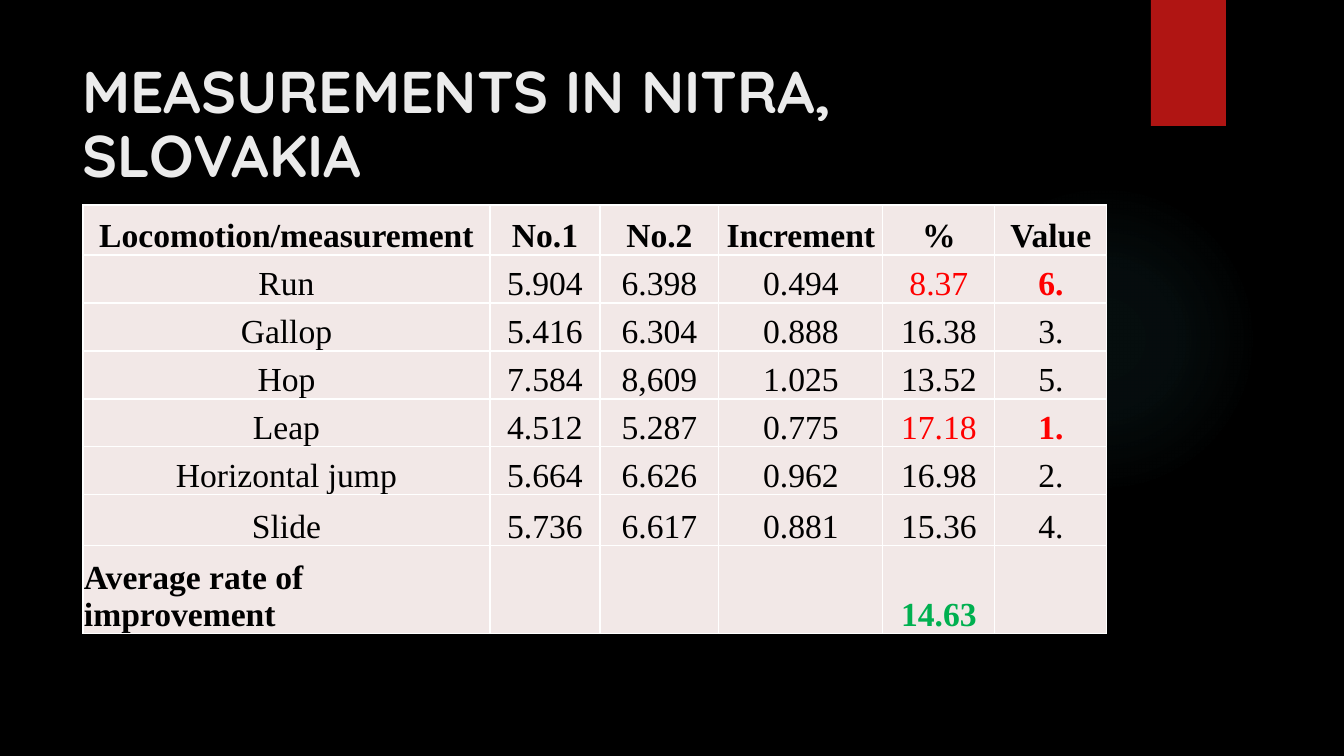
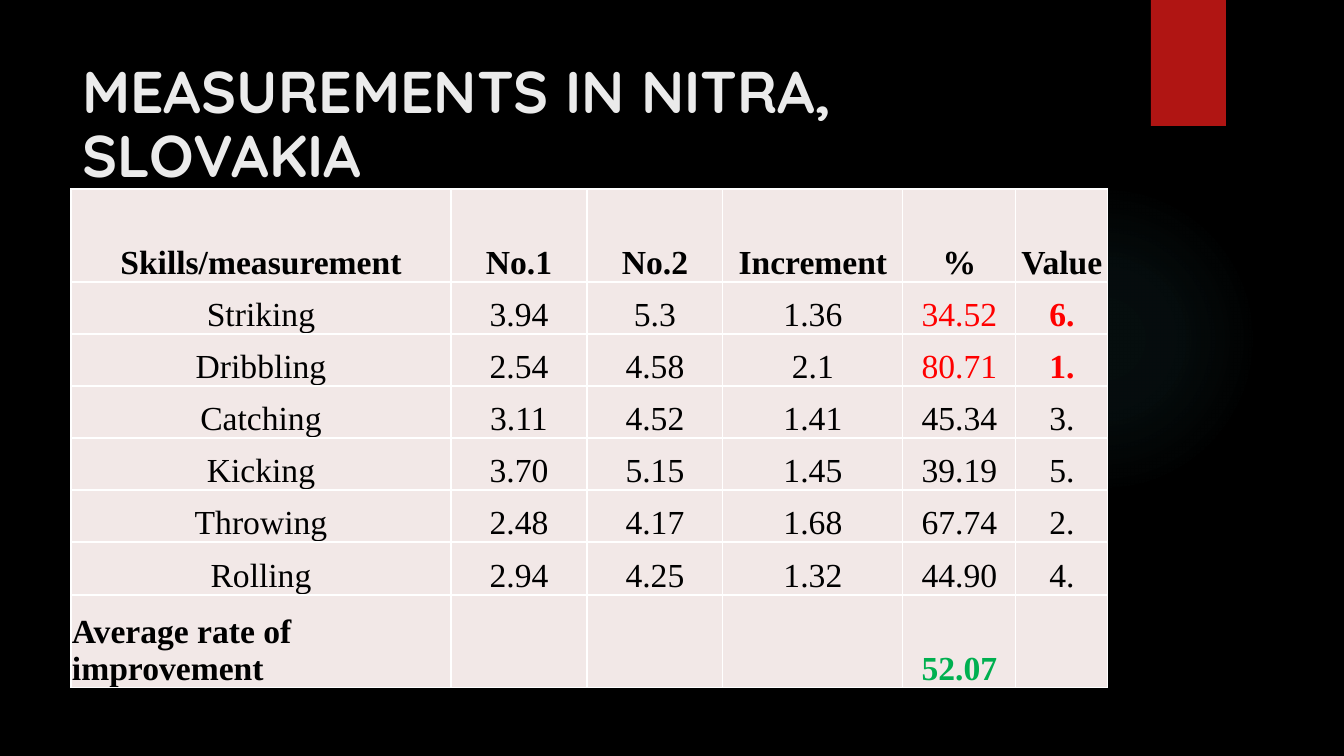
"""Two slides of movement measurements, each a titled table."""
from lxml.etree import SubElement as Sub
from pptx import Presentation
from pptx.dml.color import RGBColor as Rgb
from pptx.enum.shapes import MSO_SHAPE as Shape
from pptx.enum.text import MSO_ANCHOR as Anchor, MSO_AUTO_SIZE as Auto, PP_ALIGN as Align
from pptx.oxml import parse_xml
from pptx.oxml.ns import nsdecls, qn
from pptx.util import Emu, Pt

HUES = {"back": "000000", "title": "EBEBEB", "tab": "B01513", "glow": "50B9C1",
        "cell": "F2E8E7", "rule": "FFFFFF", "text": "000000", "mark": "FF0000", "mean": "00B050"}
WIDE, HIGH = 1344, 756
SCALE = 12192000 / WIDE
HEAD = ["No.1", "No.2", "Increment", "%", "Value"]

MOVES = [
    ["Locomotion/measurement", *HEAD],
    ["Run", "5.904", "6.398", "0.494", "8.37", "6."],
    ["Gallop", "5.416", "6.304", "0.888", "16.38", "3."],
    ["Hop", "7.584", "8,609", "1.025", "13.52", "5."],
    ["Leap", "4.512", "5.287", "0.775", "17.18", "1."],
    ["Horizontal jump", "5.664", "6.626", "0.962", "16.98", "2."],
    ["Slide", "5.736", "6.617", "0.881", "15.36", "4."],
    ["Average rate of improvement", "", "", "", "14.63", ""],
]
SKILLS = [
    ["Skills/measurement", *HEAD],
    ["Striking", "3.94", "5.3", "1.36", "34.52", "6."],
    ["Dribbling", "2.54", "4.58", "2.1", "80.71", "1."],
    ["Catching", "3.11", "4.52", "1.41", "45.34", "3."],
    ["Kicking", "3.70", "5.15", "1.45", "39.19", "5."],
    ["Throwing", "2.48", "4.17", "1.68", "67.74", "2."],
    ["Rolling", "2.94", "4.25", "1.32", "44.90", "4."],
    ["Average rate of improvement", "", "", "", "52.07", ""],
]


def px(*nums):
    return [Emu(round(num * SCALE)) for num in nums]


def hue(name):
    return Rgb.from_string(HUES[name])


class Deck:
    def __init__(self):
        self.prs = Presentation()
        self.prs.slide_width, self.prs.slide_height = px(WIDE, HIGH)
        self.slide = None
        fill = self.prs.slide_master.background.fill
        fill.solid()
        fill.fore_color.rgb = hue("back")

    def page(self, title):
        self.slide = self.prs.slides.add_slide(self.prs.slide_layouts[5])
        if len(self.prs.slides) == 1:
            self.decor()
        box = self.slide.shapes.title
        box.left, box.top, box.width, box.height = px(72, 50, 1051, 154)
        frame = box.text_frame
        frame.text = title
        frame.word_wrap = True
        frame.auto_size = Auto.TEXT_TO_FIT_SHAPE
        frame.vertical_anchor = Anchor.TOP
        frame.paragraphs[0].alignment = Align.LEFT
        self.style(frame.paragraphs[0], "Quicksand", 42, "title", True)

    def style(self, para, face, size, tone, bold):
        for run in para.runs:
            font = run.font
            font.name, font.size, font.bold = face, Pt(size), bold
            font.color.rgb = hue(tone)

    def block(self, kind, *area):
        shape = self.slide.shapes.add_shape(kind, *px(*area))
        shape.shadow.inherit = False
        shape.line.fill.background()
        self.prs.slide_master.shapes.element.append(shape.element)
        return shape

    def decor(self):
        glow = self.block(Shape.OVAL, 949, 184, 310, 310)
        glow.fill.background()
        stops = "".join(
            f'<a:gs pos="{pos}000"><a:srgbClr val="{HUES["glow"]}">'
            f'<a:alpha val="{alpha}000"/></a:srgbClr></a:gs>'
            for pos, alpha in [(0, 7), (36, 6), (69, 0)])
        grad = parse_xml(
            f'<a:gradFill {nsdecls("a")}><a:gsLst>{stops}</a:gsLst><a:path path="circle">'
            '<a:fillToRect l="50000" t="50000" r="50000" b="50000"/></a:path></a:gradFill>')
        props = glow.element.spPr
        props.replace(props.find(qn("a:noFill")), grad)
        tab = self.block(Shape.RECTANGLE, 1151, 0, 75, 126)
        tab.fill.solid()
        tab.fill.fore_color.rgb = hue("tab")

    def edge(self, cell):
        props = cell._tc.get_or_add_tcPr()
        for side in ("lnL", "lnR", "lnT", "lnB"):
            line = Sub(props, qn(f"a:{side}"), w=str(Pt(1)))
            Sub(Sub(line, qn("a:solidFill")), qn("a:srgbClr"), val=HUES["rule"])

    def cell(self, cell, text, tone, bold, align):
        self.edge(cell)
        cell.fill.solid()
        cell.fill.fore_color.rgb = hue("cell")
        cell.margin_left, cell.margin_right, cell.margin_top, cell.margin_bottom = px(1, 1, 1, 0)
        cell.vertical_anchor = Anchor.BOTTOM
        cell.text_frame.text = text
        para = cell.text_frame.paragraphs[0]
        para.alignment = align
        self.style(para, "Times New Roman", 24, tone, bold)

    def table(self, left, top, cols, rows, data):
        area = px(left, top, sum(cols), sum(rows))
        grid = self.slide.shapes.add_table(len(rows), len(cols), *area).table
        for col, wide in zip(grid.columns, px(*cols)):
            col.width = wide
        for row, high in zip(grid.rows, px(*rows)):
            row.height = high
        last = len(data) - 1
        for i, line in enumerate(data):
            top_or_end = line[5] in ("1.", "6.")
            for j, text in enumerate(line):
                tone = "text"
                if top_or_end and j >= 4:
                    tone = "mark"
                elif i == last and j == 4:
                    tone = "mean"
                bold = i in (0, last) or (top_or_end and j == 5)
                align = Align.LEFT if i == last and j == 0 else Align.CENTER
                self.cell(grid.cell(i, j), text, tone, bold, align)


def main():
    deck = Deck()
    title = "MEASUREMENTS IN NITRA, SLOVAKIA"
    deck.page(title)
    deck.table(83, 205, [407, 110, 119, 164, 112, 112], [50, *[48] * 5, 51, 88], MOVES)
    deck.page(title)
    deck.table(71, 189, [380, 136, 136, 180, 113, 92], [93, *[52] * 5, 53, 93], SKILLS)
    deck.prs.save("out.pptx")


if __name__ == "__main__":
    main()
